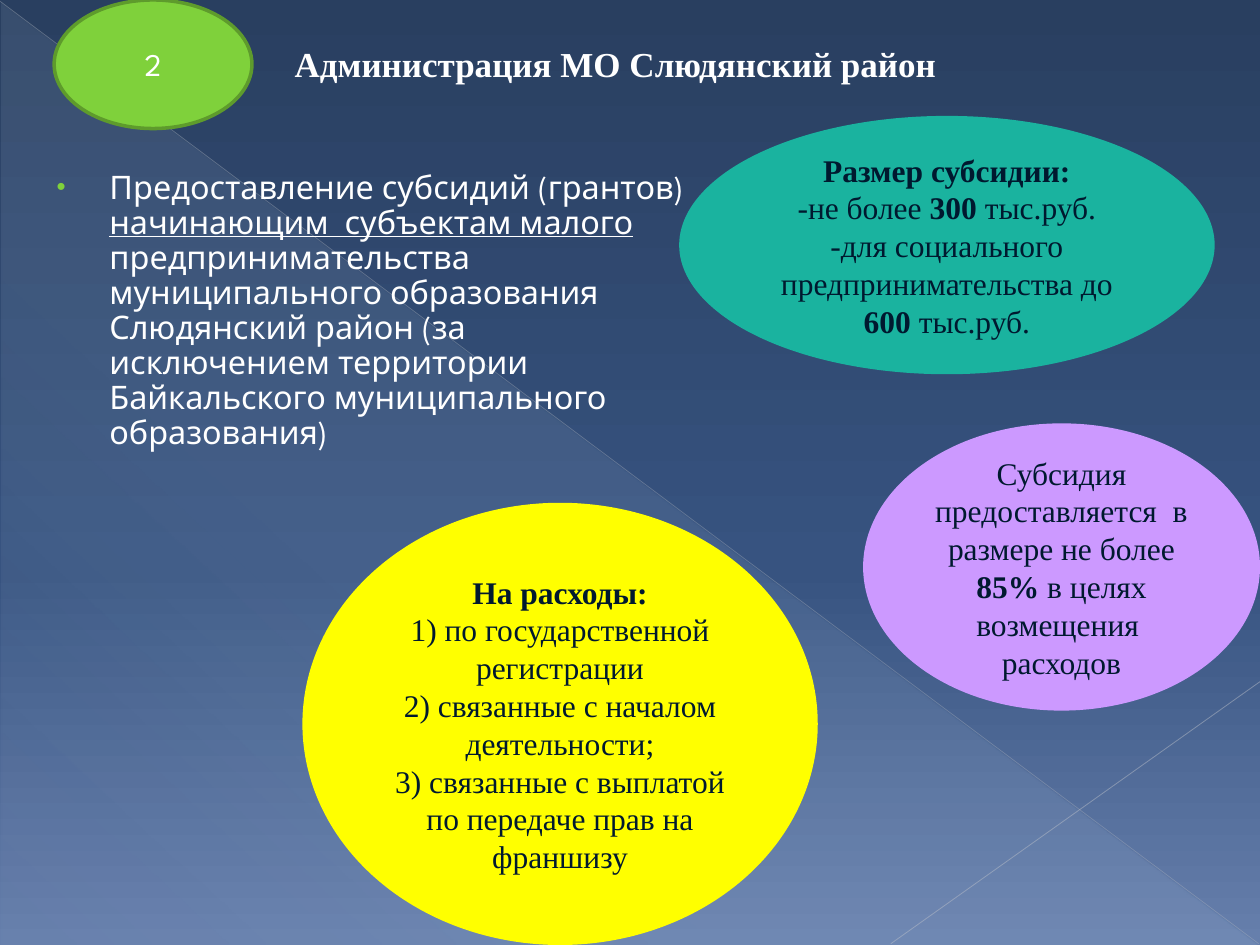
import lxml.etree
import pptx
import pptx.dml.color
import pptx.enum.shapes
import pptx.enum.text
import pptx.oxml
import pptx.oxml.ns
import pptx.util

Inches = pptx.util.Inches
Pt = pptx.util.Pt
MSO_SHAPE = pptx.enum.shapes.MSO_SHAPE
PP_ALIGN = pptx.enum.text.PP_ALIGN
MSO_ANCHOR = pptx.enum.text.MSO_ANCHOR
qn = pptx.oxml.ns.qn
NS = pptx.oxml.ns.nsdecls("a")


def rgb(value):
    return pptx.dml.color.RGBColor.from_string(value)


def set_gradient(parent, stops, angle):
    """Replace the solid fill of parent; stops are (position %, colour, opacity %)."""
    gs = "".join(
        f'<a:gs pos="{pos * 1000}"><a:srgbClr val="{color}">'
        f'<a:alpha val="{alpha * 1000}"/></a:srgbClr></a:gs>'
        for pos, color, alpha in stops)
    grad = pptx.oxml.parse_xml(
        f'<a:gradFill {NS} rotWithShape="1"><a:gsLst>{gs}</a:gsLst>'
        f'<a:lin ang="{angle * 60000}" scaled="0"/></a:gradFill>')
    parent.replace(parent.find(qn("a:solidFill")), grad)


def write_text(sp, paragraphs, font, anchor=MSO_ANCHOR.MIDDLE, align=PP_ALIGN.CENTER):
    """Each paragraph is a list of (text, font values that differ)."""
    tf = sp.text_frame
    tf.word_wrap = True
    tf.vertical_anchor = anchor
    for i, runs in enumerate(paragraphs):
        p = tf.add_paragraph() if i else tf.paragraphs[0]
        p.alignment = align
        for text, extra in runs:
            r = p.add_run()
            r.text = text
            values = {**font, **extra}
            r.font.color.rgb = rgb(values.pop("color"))
            for name, value in values.items():
                setattr(r.font, name, value)


prs = pptx.Presentation()
prs.slide_width, prs.slide_height = Inches(10), Inches(7.5)
s = prs.slides.add_slide(prs.slide_layouts[6])

# Background
s.background.fill.solid()
set_gradient(s.background._cSld.find(".//" + qn("p:bgPr")),
             [(0, "293F60", 100), (60, "375380", 100), (100, "667FAC", 100)], 90)

triangle = s.shapes.add_shape(MSO_SHAPE.RIGHT_TRIANGLE,
                              Inches(0.01), Inches(0.02), Inches(9.98), Inches(7.48))
triangle.shadow.inherit = False
triangle.line.fill.background()
triangle.fill.solid()
set_gradient(triangle._element.spPr,
             [(0, "D6ECFF", 10), (70, "D6ECFF", 8), (100, "D6ECFF", 1)], 133)

for ends, color, width, alpha in [
    ((0, 0.01, 9.99, 7.49), "B7BCC5", 0.39, 35),
    ((10, 5.41, 7.07, 7.49), "BFC3CB", 0.47, 45),
]:
    line = s.shapes.add_connector(pptx.enum.shapes.MSO_CONNECTOR.STRAIGHT,
                                  *[Inches(v) for v in ends])
    line.line.width = Pt(width)
    line.line.color.rgb = rgb(color)
    spPr = line._element.spPr
    lxml.etree.SubElement(spPr.find(".//" + qn("a:srgbClr")), qn("a:alpha"),
                          val=str(alpha * 1000))
    lxml.etree.SubElement(spPr, qn("a:effectLst"))

# Ellipses
dark = {"name": "Times New Roman", "size": Pt(18), "color": "00192F", "bold": False}
light = {"name": "League Spartan", "size": Pt(18), "color": "FFFFFF"}
bold = {"bold": True}
ellipses = [
    ((5.39, 0.92, 4.25, 2.05), "1AB39F", None, dark, [
        [("Размер субсидии:", bold)],
        [("-не более ", {}), ("300", bold), (" тыс.руб.", {})],
        [("-для социального предпринимательства до ", {}), ("600", bold),
         (" тыс.руб.", {})],
    ]),
    ((0.43, 0, 1.57, 1.02), "7FD13B", "5E9B2C", light, [[("2", {})]]),
    ((6.85, 3.36, 3.15, 2.28), "CC99FF", None, dark, [
        [("Субсидия предоставляется  в размере не более ", {}), ("85% ", bold),
         ("в целях возмещения  расходов", {})],
    ]),
    ((2.4, 3.99, 4.09, 3.51), "FFFF00", None, dark, [
        [("На расходы:", bold)],
        [("1) по государственной регистрации", {})],
        [("2) связанные с началом деятельности;", {})],
        [("3) связанные с выплатой по передаче прав на франшизу", {})],
    ]),
]
for box, fill, outline, font, paragraphs in ellipses:
    sp = s.shapes.add_shape(MSO_SHAPE.OVAL, *[Inches(v) for v in box])
    sp.shadow.inherit = False
    sp.fill.solid()
    sp.fill.fore_color.rgb = rgb(fill)
    if outline:
        sp.line.color.rgb = rgb(outline)
        sp.line.width = Pt(2)
    else:
        sp.line.fill.background()
    write_text(sp, paragraphs, font)

# Title
title = s.shapes.add_textbox(Inches(2.24), Inches(0.29), Inches(7.09), Inches(0.77))
write_text(title, [[("Администрация МО Слюдянский район", bold)]],
           {**dark, "size": Pt(20), "color": "FFFFFF"}, MSO_ANCHOR.TOP, PP_ALIGN.LEFT)

# Bulleted description
body = s.shapes.add_textbox(Inches(0.28), Inches(1.31), Inches(5.28), Inches(2.68))
write_text(body, [[
    ("Предоставление субсидий (грантов) ", {}),
    ("начинающим  субъектам малого ", {"underline": True}),
    ("предпринимательства муниципального образования Слюдянский район "
     "(за исключением территории Байкальского муниципального образования)", {}),
]], {**light, "size": Pt(18.5)}, MSO_ANCHOR.TOP, PP_ALIGN.LEFT)
p = body.text_frame.paragraphs[0]
p.line_spacing = 0.9
pPr = p._p.get_or_add_pPr()
pPr.set("marL", str(Inches(0.49)))
pPr.set("indent", str(Inches(-0.42)))
for xml in (f'<a:buClr {NS}><a:srgbClr val="7FD13B"/></a:buClr>',
            f'<a:buSzPct {NS} val="80000"/>',
            f'<a:buFont {NS} typeface="Arial"/>',
            f'<a:buChar {NS} char="•"/>'):
    pPr.append(pptx.oxml.parse_xml(xml))

prs.save("out.pptx")
